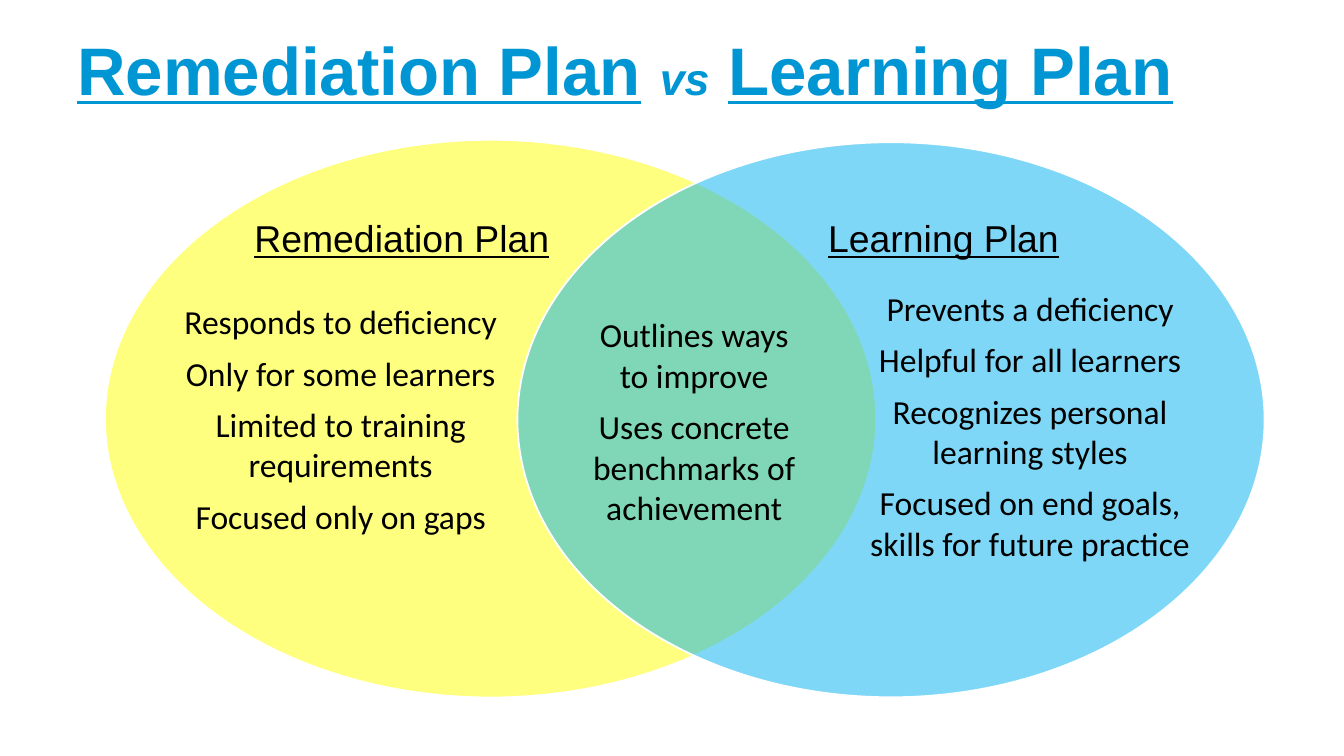
from dataclasses import dataclass

from lxml import etree
from pptx import Presentation
from pptx.dml.color import RGBColor
from pptx.enum.shapes import MSO_SHAPE
from pptx.enum.text import MSO_ANCHOR, PP_ALIGN
from pptx.oxml.ns import qn
from pptx.util import Pt

OVAL = MSO_SHAPE.OVAL
CENTER = PP_ALIGN.CENTER
TOP, MIDDLE = MSO_ANCHOR.TOP, MSO_ANCHOR.MIDDLE
BLANK_LAYOUT = 6


@dataclass(frozen=True)
class Theme:
    title_color: RGBColor = RGBColor(0x00, 0x96, 0xD3)
    ink: RGBColor = RGBColor(0x00, 0x00, 0x00)
    outline: RGBColor = RGBColor(0xFF, 0xFF, 0xFF)
    remediation: RGBColor = RGBColor(0xFF, 0xFF, 0x00)
    learning: RGBColor = RGBColor(0x00, 0xB0, 0xF0)
    heading_font: str = "Arial"
    body_font: str = "Calibri"
    title_size: int = 36
    versus_size: int = 24
    heading_size: int = 20
    body_size: int = 18
    opacity: int = 50


THEME = Theme()
TITLE = dict(name=THEME.heading_font, size=Pt(THEME.title_size), bold=True)
HEADING = dict(name=THEME.heading_font, size=Pt(THEME.heading_size), underline=True)
BODY = dict(name=THEME.body_font, size=Pt(THEME.body_size))

REMEDIATION_POINTS = [
    "Responds to deficiency",
    "Only for some learners",
    "Limited to training requirements",
    "Focused only on gaps",
]
LEARNING_POINTS = [
    "Prevents a deficiency",
    "Helpful for all learners",
    "Recognizes personal learning styles",
    "Focused on end goals, skills for future practice",
]
SHARED_POINTS = [
    "Outlines ways to improve",
    "Uses concrete benchmarks of achievement",
]


def within(box, left, top, width, height):
    """Turn a place inside box into a place on the page."""
    return box[0] + left, box[1] + top, width, height


def add_text(page, box, paragraphs, color, anchor=TOP, **spacing):
    """Add centred paragraphs, each a list of (words, font format) spans."""
    frame = page.shapes.add_textbox(*map(Pt, box)).text_frame
    frame.word_wrap = True
    frame.vertical_anchor = anchor
    for index, spans in enumerate(paragraphs):
        para = frame.paragraphs[0] if index == 0 else frame.add_paragraph()
        para.alignment = CENTER
        for key, value in spacing.items():
            setattr(para, key, value)
        for words, style in spans:
            span = para.add_run()
            span.text = words
            span.font.color.rgb = color
            for key, value in style.items():
                setattr(span.font, key, value)


def add_title(page, box):
    underlined = dict(TITLE, underline=True)
    versus = dict(TITLE, size=Pt(THEME.versus_size), italic=True)
    spans = [
        ("Remediation Plan", underlined),
        (" ", dict(TITLE)),
        ("vs", versus),
        (" ", dict(TITLE)),
        ("Learning Plan", underlined),
    ]
    add_text(page, box, [spans], THEME.title_color, MIDDLE, line_spacing=0.9)


def add_ellipse(page, box, color):
    ellipse = page.shapes.add_shape(OVAL, *map(Pt, box))
    ellipse.shadow.inherit = False
    ellipse.fill.solid()
    ellipse.fill.fore_color.rgb = color
    ellipse.line.color.rgb = THEME.outline
    ellipse.line.width = Pt(1)
    fill_color = ellipse.fill._xPr.find(qn("a:solidFill"))[0]
    etree.SubElement(fill_color, qn("a:alpha"), val=str(THEME.opacity * 1000))


def add_heading(page, box, words):
    add_text(page, box, [[(words, HEADING)]], THEME.ink, MIDDLE, line_spacing=0.9)


def add_points(page, box, points):
    paragraphs = [[(point, BODY)] for point in points]
    add_text(page, box, paragraphs, THEME.ink, space_after=Pt(6))


def add_venn(page, box):
    """Two overlapping ellipses with their headings and points."""
    add_ellipse(page, within(box, 0, 0, 413.3, 298.8), THEME.remediation)
    add_ellipse(page, within(box, 221, 1.3, 400.3, 297.4), THEME.learning)
    add_points(page, within(box, 29.5, 82.8, 193.7, 134.6), REMEDIATION_POINTS)
    add_points(page, within(box, 390.2, 75.6, 211, 156.2), LEARNING_POINTS)
    add_points(page, within(box, 249.1, 90, 133.2, 122.4), SHARED_POINTS)
    for left, words in ((46.8, "Remediation Plan"), (337, "Learning Plan")):
        add_heading(page, within(box, left, 29.5, 224.6, 49), words)


def main():
    deck = Presentation()
    deck.slide_width, deck.slide_height = Pt(720), Pt(405)
    page = deck.slides.add_slide(deck.slide_layouts[BLANK_LAYOUT])
    add_title(page, (24.5, 0, 620.6, 78.5))
    add_venn(page, (56.2, 74.9, 621.3, 298.8))
    deck.save("out.pptx")


if __name__ == "__main__":
    main()
